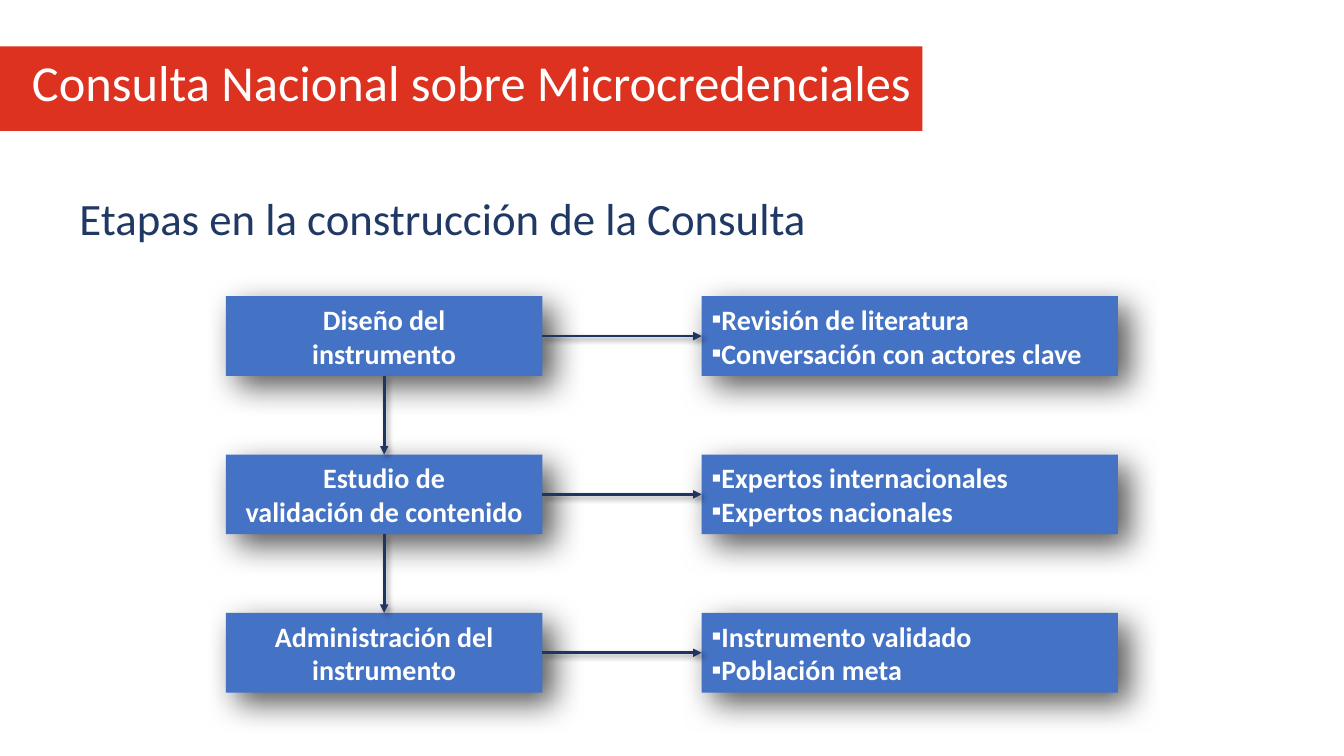
from dataclasses import dataclass

from lxml.etree import SubElement
from pptx import Presentation
from pptx.dml.color import RGBColor
from pptx.enum.shapes import MSO_CONNECTOR, MSO_SHAPE
from pptx.enum.text import MSO_ANCHOR, MSO_AUTO_SIZE, PP_ALIGN
from pptx.oxml.ns import qn
from pptx.util import Pt


@dataclass(frozen=True)
class Theme:
    font: str = "Calibri"
    banner: str = "DC321F"
    box: str = "4472C4"
    arrow: str = "203464"
    heading: str = "203864"
    light: str = "FFFFFF"
    shadow: str = "000000"
    title_size: int = 36
    heading_size: int = 32
    box_size: int = 20


THEME = Theme()
TOP, PITCH, BOX_HEIGHT = 211.6, 113.1, 56.9
STAGE_LEFT, STAGE_WIDTH = 161.3, 226.2
DETAIL_LEFT, DETAIL_WIDTH = 501.2, 297.4
BOX_SHADOW = dict(alpha=65, blur=23, distance=11)
ARROW_SHADOW = dict(alpha=40, blur=4, distance=3)
STEPS = [
    (["Diseño del", "instrumento"],
     ["Revisión de literatura", "Conversación con actores clave"]),
    (["Estudio de", "validación de contenido"],
     ["Expertos internacionales", "Expertos nacionales"]),
    (["Administración del instrumento"],
     ["Instrumento validado", "Población meta"]),
]


def write(frame, lines, *, size, color, bold=False, align=PP_ALIGN.LEFT,
          anchor=MSO_ANCHOR.TOP, bullet=None):
    frame.word_wrap = True
    frame.vertical_anchor = anchor
    for index, line in enumerate(lines):
        paragraph = frame.add_paragraph() if index else frame.paragraphs[0]
        paragraph.alignment = align
        if bullet:
            properties = paragraph._p.get_or_add_pPr()
            properties.set("marL", "0")
            properties.set("indent", str(-Pt(18)))
            SubElement(properties, qn("a:buFont"), typeface=THEME.font)
            SubElement(properties, qn("a:buChar"), char=bullet)
        run = paragraph.add_run()
        run.text = line
        run.font.name = THEME.font
        run.font.size = Pt(size)
        run.font.bold = bold
        run.font.color.rgb = RGBColor.from_string(color)


def add_shadow(properties, *, alpha, blur, distance):
    effects = SubElement(properties, qn("a:effectLst"))
    outer = SubElement(effects, qn("a:outerShdw"), blurRad=str(Pt(blur)),
                       dist=str(Pt(distance)), dir=str(45 * 60000),
                       algn="tl", rotWithShape="0")
    tint = SubElement(outer, qn("a:srgbClr"), val=THEME.shadow)
    SubElement(tint, qn("a:alpha"), val=str(alpha * 1000))


def add_rectangle(slide, left, top, width, height, color, shadow=None):
    rectangle = slide.shapes.add_shape(
        MSO_SHAPE.RECTANGLE, Pt(left), Pt(top), Pt(width), Pt(height))
    rectangle.fill.solid()
    rectangle.fill.fore_color.rgb = RGBColor.from_string(color)
    rectangle.line.fill.background()
    if shadow:
        add_shadow(rectangle._element.spPr, **shadow)
    else:
        rectangle.shadow.inherit = False
    return rectangle


def add_label(slide, left, top, width, height, text, **text_format):
    label = slide.shapes.add_textbox(Pt(left), Pt(top), Pt(width), Pt(height))
    write(label.text_frame, [text], **text_format)
    label.text_frame.auto_size = MSO_AUTO_SIZE.SHAPE_TO_FIT_TEXT


def add_box(slide, left, top, width, lines, **text_format):
    box = add_rectangle(slide, left, top, width, BOX_HEIGHT, THEME.box, BOX_SHADOW)
    write(box.text_frame, lines, size=THEME.box_size, color=THEME.light,
          bold=True, anchor=MSO_ANCHOR.MIDDLE, **text_format)
    return box


def add_arrow(slide, source, source_side, target, target_side):
    arrow = slide.shapes.add_connector(MSO_CONNECTOR.STRAIGHT, 0, 0, 0, 0)
    arrow.begin_connect(source, source_side)
    arrow.end_connect(target, target_side)
    arrow.line.width = Pt(2)
    arrow.line.color.rgb = RGBColor.from_string(THEME.arrow)
    SubElement(arrow.line._get_or_add_ln(), qn("a:tailEnd"), type="triangle")
    add_shadow(arrow._element.spPr, **ARROW_SHADOW)


def main():
    presentation = Presentation()
    presentation.slide_width = Pt(960)
    presentation.slide_height = Pt(540)
    slide = presentation.slides.add_slide(presentation.slide_layouts[6])

    add_rectangle(slide, 0, 33.1, 658.8, 60.5, THEME.banner)
    add_label(slide, 15.8, 33.1, 666.7, 72.7,
              "Consulta Nacional sobre Microcredenciales",
              size=THEME.title_size, color=THEME.light)
    add_label(slide, 49.7, 132.5, 779.8, 46.1,
              "Etapas en la construcción de la Consulta",
              size=THEME.heading_size, color=THEME.heading)

    stages, details = [], []
    for row, (stage_lines, detail_lines) in enumerate(STEPS):
        top = TOP + row * PITCH
        stages.append(add_box(slide, STAGE_LEFT, top, STAGE_WIDTH, stage_lines,
                              align=PP_ALIGN.CENTER))
        details.append(add_box(slide, DETAIL_LEFT, top, DETAIL_WIDTH,
                               detail_lines, bullet="▪"))
    for stage, following in zip(stages, stages[1:]):
        add_arrow(slide, stage, 2, following, 0)
    for stage, detail in zip(stages, details):
        add_arrow(slide, stage, 3, detail, 1)

    presentation.save("out.pptx")


if __name__ == "__main__":
    main()
